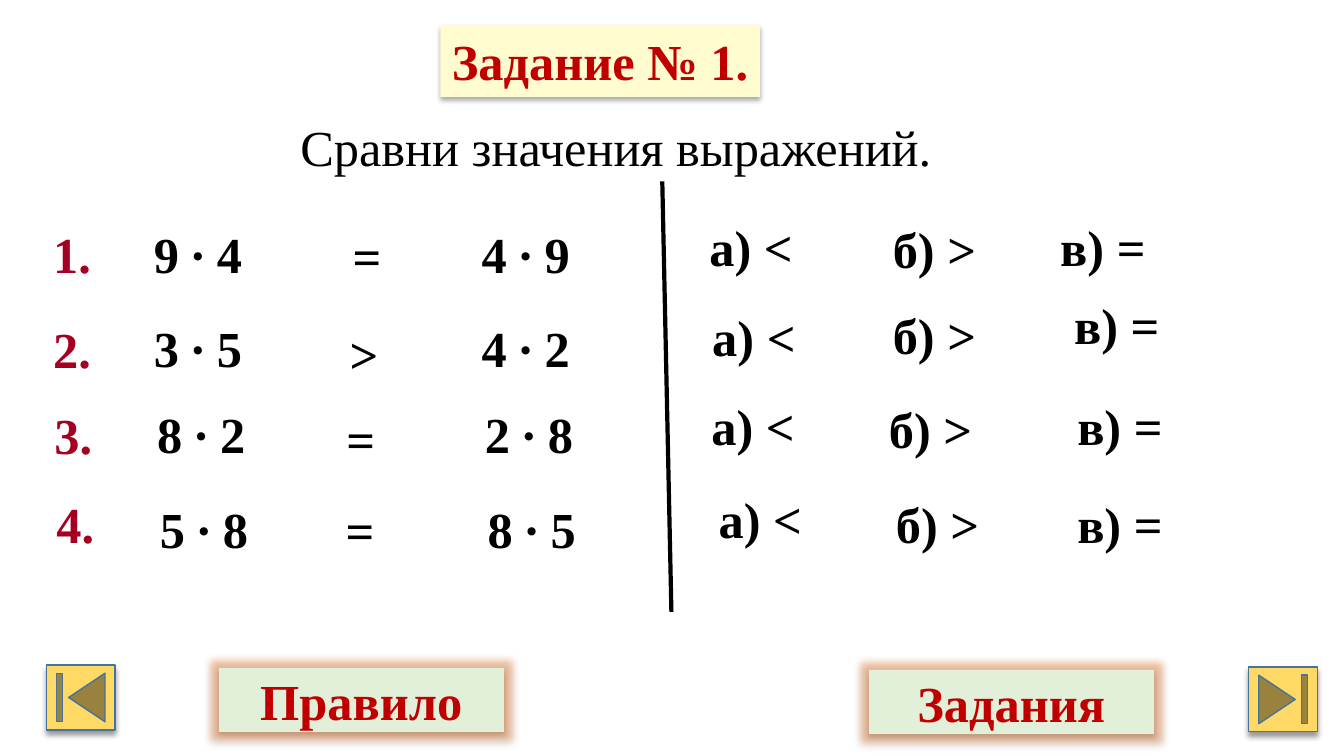
from dataclasses import dataclass

from lxml import etree
from pptx import Presentation
from pptx.dml.color import RGBColor
from pptx.enum import shapes, text
from pptx.oxml import ns
from pptx.util import Cm, Pt


@dataclass(frozen=True)
class Theme:
    font: str = "Times New Roman"
    size: int = 36
    ink: str = "000000"
    number: str = "A50021"
    accent: str = "C00000"
    title_fill: str = "FFFCCF"
    button_fill: str = "E2F0D9"
    arrow_fill: str = "FFD966"
    arrow_line: str = "43739E"
    glow: str = "ED7D31"


THEME = Theme()
LINE_HEIGHT = 1.8
SECOND_FACTOR_TAB = 8.26

# Each task: number, two products, sign, with (x, y) offsets in the region
TASKS = [
    [("1.", 0, 0), ("9 ∙ 4\t4 ∙ 9", 2.54, 0), ("=", 7.55, 0.07)],
    [("2.", 0, 2.41), ("3 ∙ 5\t4 ∙ 2", 2.54, 2.38), (">", 7.47, 2.54)],
    [("3.", 0.03, 4.57), ("8 ∙ 2\t2 ∙ 8", 2.62, 4.54), ("=", 7.39, 4.67)],
    [("4.", 0.08, 6.8), ("5 ∙ 8\t8 ∙ 5", 2.69, 6.93), ("=", 7.37, 6.96)],
]
CHOICES = ["а) <", "б) >", "в) ="]
CHOICE_OFFSETS = [
    [(0, 0), (4.62, 0.05), (8.84, 0)],
    [(0.07, 2.26), (4.62, 2.21), (9.19, 1.96)],
    [(0.05, 4.5), (4.52, 4.58), (9.27, 4.5)],
    [(0.23, 6.84), (4.7, 6.96), (9.27, 6.96)],
]


def write(shape, words, color, bold=True, align=text.PP_ALIGN.LEFT,
          anchor=text.MSO_ANCHOR.TOP, wrap=False, tab=None):
    frame = shape.text_frame
    formats = {"word_wrap": wrap, "vertical_anchor": anchor,
               "auto_size": text.MSO_AUTO_SIZE.NONE}
    for name, value in formats.items():
        setattr(frame, name, value)
    para = frame.paragraphs[0]
    para.alignment = align
    if tab:
        tabs = etree.SubElement(para._p.get_or_add_pPr(), ns.qn("a:tabLst"))
        etree.SubElement(tabs, ns.qn("a:tab"), pos=str(Cm(tab)), algn="l")
    span = para.add_run()
    span.text = words
    for name, value in {"name": THEME.font, "size": Pt(THEME.size), "bold": bold}.items():
        setattr(span.font, name, value)
    span.font.color.rgb = RGBColor.from_string(color)


def add_label(page, box, words, color=THEME.ink, **formats):
    label = page.shapes.add_textbox(*map(Cm, box))
    write(label, words, color, **formats)


def effect_list(shape):
    """Return the shape's own effect list, empty at first."""
    properties = shape._element.spPr
    effects = properties.find(ns.qn("a:effectLst"))
    if effects is None:
        effects = etree.SubElement(properties, ns.qn("a:effectLst"))
    return effects


def add_effect(shape, kind, color, alpha, **settings):
    effect = etree.SubElement(effect_list(shape), ns.qn(f"a:{kind}"), **settings)
    shade = etree.SubElement(effect, ns.qn("a:srgbClr"), val=color)
    etree.SubElement(shade, ns.qn("a:alpha"), val=str(alpha * 1000))


def add_shadow(shape, alpha, blur, distance):
    add_effect(shape, "outerShdw", THEME.ink, alpha, blurRad=str(Pt(blur)),
               dist=str(Pt(distance)), dir="5400000", rotWithShape="0")


def paint(shape, fill, line=None):
    shape.shadow.inherit = False
    shape.fill.solid()
    shape.fill.fore_color.rgb = RGBColor.from_string(fill)
    if line:
        shape.line.color.rgb = RGBColor.from_string(line)
        shape.line.width = Pt(1)
    else:
        shape.line.fill.background()


def add_title(page, box, words):
    title = page.shapes.title
    for name, value in zip(("left", "top", "width", "height"), box):
        setattr(title, name, Cm(value))
    paint(title, THEME.title_fill)
    add_shadow(title, 32, 3.5, 2.2)
    write(title, words, THEME.accent, align=text.PP_ALIGN.CENTER)


def add_tasks(page, box):
    left, top = box
    for number, products, sign in TASKS:
        cells = [
            (number, LINE_HEIGHT, {"color": THEME.number}),
            (products, 14.63, {"wrap": True, "tab": SECOND_FACTOR_TAB}),
            (sign, 1.24, {}),
        ]
        for (words, x, y), width, formats in cells:
            add_label(page, (left + x, top + y, width, LINE_HEIGHT), words, **formats)


def add_answers(page, box):
    left, top = box
    for offsets in CHOICE_OFFSETS:
        for words, (x, y) in zip(CHOICES, offsets):
            add_label(page, (left + x, top + y, 2.67, LINE_HEIGHT), words)


def add_divider(page, start, end):
    divider = page.shapes.add_connector(
        shapes.MSO_CONNECTOR.STRAIGHT, *map(Cm, start + end))
    divider.line.color.rgb = RGBColor.from_string(THEME.ink)
    divider.line.width = Pt(3)
    effect_list(divider)


def add_arrow_button(page, box, rotation):
    button = page.shapes.add_shape(shapes.MSO_SHAPE.ACTION_BUTTON_END, *map(Cm, box))
    button.rotation = rotation
    paint(button, THEME.arrow_fill, THEME.arrow_line)
    add_shadow(button, 40, 4, 3)


def add_text_button(page, box, words):
    button = page.shapes.add_shape(shapes.MSO_SHAPE.ACTION_BUTTON_CUSTOM, *map(Cm, box))
    paint(button, THEME.button_fill)
    add_effect(button, "glow", THEME.glow, 40, rad=str(Pt(11)))
    add_shadow(button, 32, 3.5, 2.2)
    write(button, words, THEME.accent, align=text.PP_ALIGN.CENTER,
          anchor=text.MSO_ANCHOR.MIDDLE, wrap=True)


def main():
    deck = Presentation()
    deck.slide_width, deck.slide_height = Cm(33.87), Cm(19.05)
    page = deck.slides.add_slide(deck.slide_layouts[5])

    add_title(page, (11.1, 0.64, 8.05, LINE_HEIGHT), "Задание № 1.")
    add_label(page, (7.32, 2.79, 16.59, LINE_HEIGHT), "Сравни значения выражений.",
              bold=False)
    add_tasks(page, (1.09, 5.49))
    add_divider(page, (16.69, 4.57), (16.92, 15.42))
    add_answers(page, (17.63, 5.33))
    add_arrow_button(page, (1.17, 16.76, 1.73, 1.63), 180)
    add_text_button(page, (5.51, 16.84, 7.19, 1.6), "Правило")
    add_text_button(page, (21.89, 16.89, 7.19, 1.6), "Задания")
    add_arrow_button(page, (31.47, 16.81, 1.73, 1.63), 0)

    deck.save("out.pptx")


if __name__ == "__main__":
    main()
